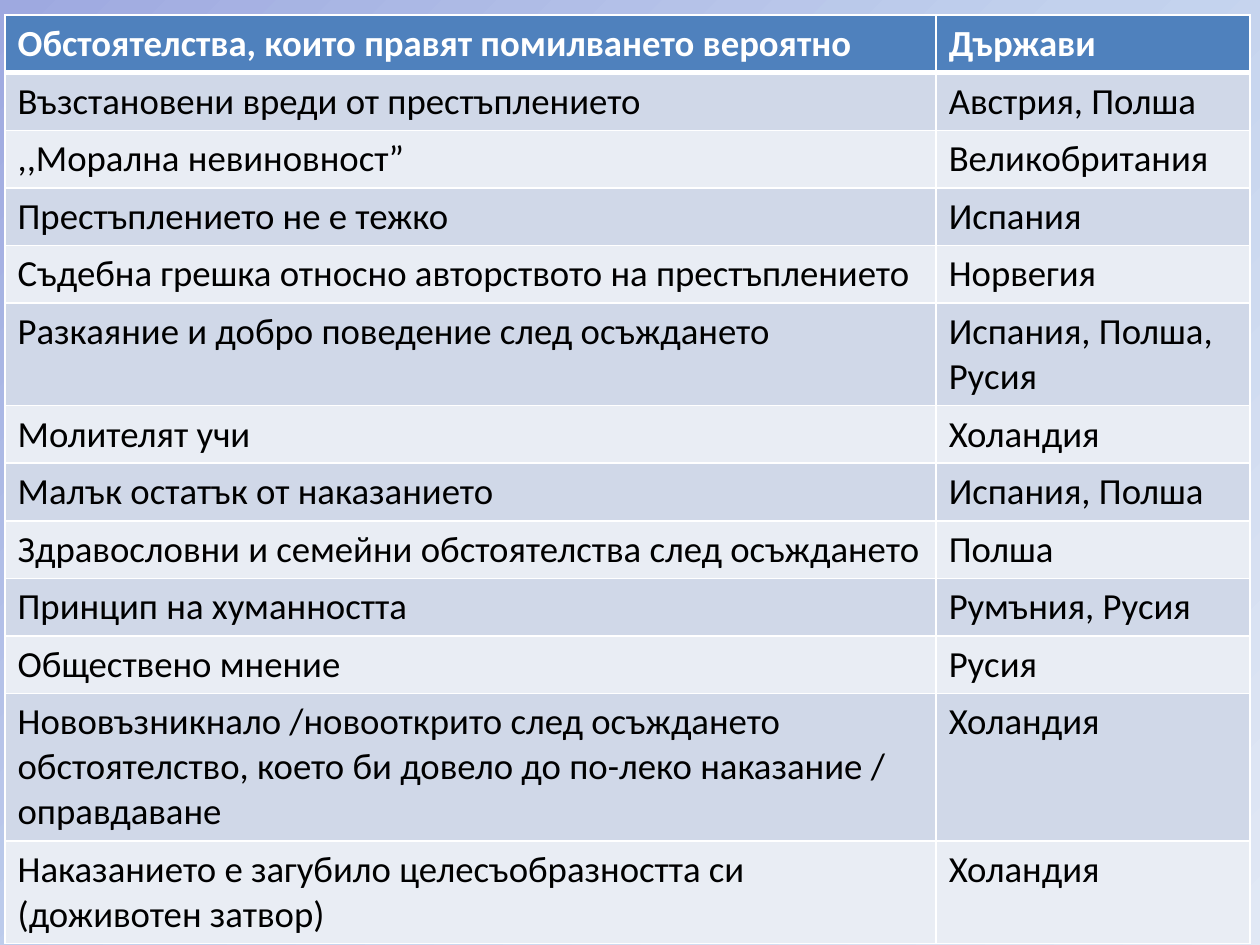
from lxml import etree
from pptx import Presentation
from pptx.dml.color import RGBColor
from pptx.oxml.ns import qn
from pptx.util import Inches, Pt

WHITE, BLACK, HEADER_BLUE = "FFFFFF", "000000", "4F81BD"
BANDS = ("E9EDF4", "D0D8E8")
BACKDROP = ((0, "9EA9E0"), (50, "C2D1ED"), (100, "E1E8F5"))
COLUMN_WIDTHS = (7.39, 2.49)
ROW_HEIGHT = 0.42
TALL_ROWS = {5: 0.61, 6: 0.45, 11: 0.74, 12: 0.75}
PARDON_GROUNDS = (
    ("Обстоятелства, които правят помилването вероятно", "Държави"),
    ("Възстановени вреди от престъплението", "Австрия, Полша"),
    (",,Морална невиновност”", "Великобритания"),
    ("Престъплението не е тежко", "Испания"),
    ("Съдебна грешка относно авторството на престъплението", "Норвегия"),
    ("Разкаяние и добро поведение след осъждането", "Испания, Полша, Русия"),
    ("Молителят учи", "Холандия"),
    ("Малък остатък от наказанието", "Испания, Полша"),
    ("Здравословни и семейни обстоятелства след осъждането", "Полша"),
    ("Принцип на хуманността", "Румъния, Русия"),
    ("Обществено мнение", "Русия"),
    ("Нововъзникнало /новооткрито след осъждането обстоятелство, "
     "което би довело до по-леко наказание / оправдаване", "Холандия"),
    ("Наказанието е загубило целесъобразността си (доживотен затвор)", "Холандия"),
)


def rgb(value):
    return RGBColor.from_string(value)


class SlideBuilder:
    font = {"name": "Calibri", "size": Pt(21)}

    def __init__(self, slide):
        self.slide = slide

    def background(self, stops, angle):
        fill = self.slide.background.fill
        fill.gradient()
        fill.gradient_angle = 360 - angle
        stop_list = self.slide.element.find(".//" + qn("a:gsLst"))
        for old_stop in list(stop_list):
            stop_list.remove(old_stop)
        for position, color in stops:
            stop = etree.SubElement(stop_list, qn("a:gs"), pos=str(position * 1000))
            etree.SubElement(stop, qn("a:srgbClr"), val=color)

    def borders(self, cell, widths):
        properties = cell._tc.get_or_add_tcPr()
        for side, width in widths.items():
            line = etree.SubElement(properties, qn(f"a:ln{side}"), w=str(Pt(width)))
            solid = etree.SubElement(line, qn("a:solidFill"))
            etree.SubElement(solid, qn("a:srgbClr"), val=WHITE)

    def cell(self, cell, text, row):
        is_header = row == 0
        self.borders(cell, {"L": 1, "R": 1, "T": 3 if row == 1 else 1, "B": 3 if is_header else 1})
        cell.fill.solid()
        cell.fill.fore_color.rgb = rgb(HEADER_BLUE if is_header else BANDS[row % 2])
        cell.text = text
        font = cell.text_frame.paragraphs[0].runs[0].font
        for attribute, value in {**self.font, "bold": is_header}.items():
            setattr(font, attribute, value)
        font.color.rgb = rgb(WHITE if is_header else BLACK)

    def table(self, records, left, top, widths, heights):
        table = self.slide.shapes.add_table(
            len(records), len(widths), Inches(left), Inches(top),
            Inches(sum(widths)), Inches(sum(heights))).table
        for column, width in zip(table.columns, widths):
            column.width = Inches(width)
        for row, (record, height) in enumerate(zip(records, heights)):
            table.rows[row].height = Inches(height)
            for column, text in enumerate(record):
                self.cell(table.cell(row, column), text, row)


def main():
    presentation = Presentation()
    presentation.slide_width, presentation.slide_height = Inches(10), Inches(7.5)
    blank_layout = presentation.slide_layouts[6]
    builder = SlideBuilder(presentation.slides.add_slide(blank_layout))
    builder.background(BACKDROP, 45)
    row_heights = [TALL_ROWS.get(row, ROW_HEIGHT) for row in range(len(PARDON_GROUNDS))]
    builder.table(PARDON_GROUNDS, 0.04, 0.12, COLUMN_WIDTHS, row_heights)
    presentation.save("out.pptx")


if __name__ == "__main__":
    main()
